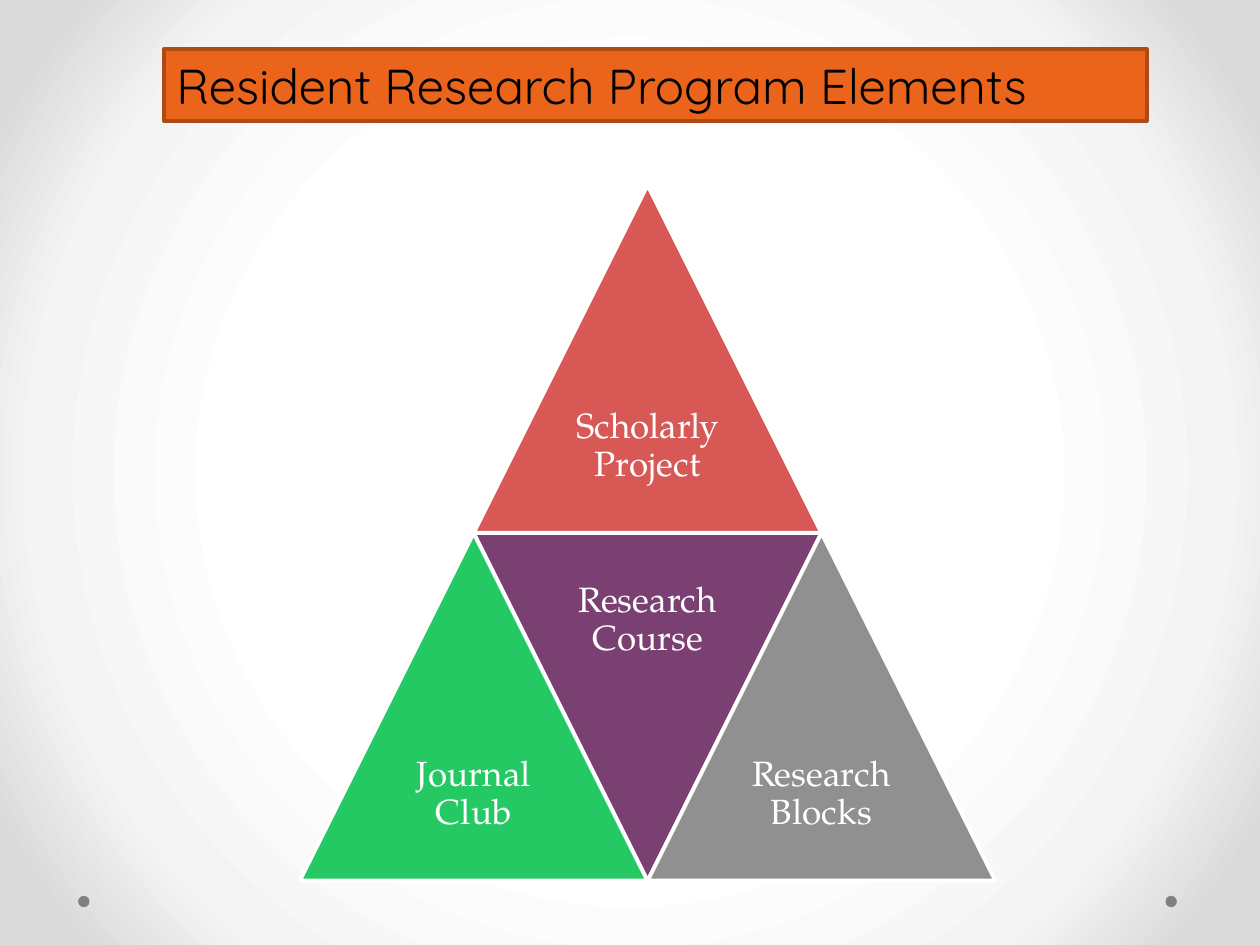
from dataclasses import dataclass

from pptx import Presentation
from pptx.dml.color import RGBColor
from pptx.enum.shapes import MSO_SHAPE as Preset
from pptx.enum.text import MSO_ANCHOR as Anchor, MSO_AUTO_SIZE as AutoSize, PP_ALIGN as Align
from pptx.oxml import parse_xml
from pptx.oxml.ns import nsdecls
from pptx.util import Inches, Pt


@dataclass(frozen=True)
class Theme:
    title_font: str = "Quicksand"
    label_font: str = "TeX Gyre Pagella"
    title_size: int = 28
    label_size: int = 20
    outline: float = 2.25
    title_text: str = "000000"
    title_fill: str = "EB641B"
    title_line: str = "AE4A14"
    white: str = "FFFFFF"
    dot: str = "808080"
    red: str = "D75855"
    green: str = "25C963"
    purple: str = "7B4072"
    grey: str = "909090"
    backdrop: tuple = ((50, "FFFFFF"), (76, "F4F4F4"), (92, "DADADA"))


theme = Theme()


def paint(shape, fill, line=None):
    shape.shadow.inherit = False
    shape.fill.solid()
    shape.fill.fore_color.rgb = RGBColor.from_string(fill)
    if line:
        shape.line.color.rgb = RGBColor.from_string(line)
        shape.line.width = Pt(theme.outline)
    else:
        shape.line.fill.background()


def add_span(para, text, font, size, color):
    span = para.add_run()
    span.text = text
    span.font.name = font
    span.font.size = Pt(size)
    span.font.color.rgb = RGBColor.from_string(color)


deck = Presentation()
deck.slide_width, deck.slide_height = Inches(10), Inches(7.5)
page = deck.slides.add_slide(deck.slide_layouts[5])

# Radial background
stops = "".join(
    f'<a:gs pos="{share * 1000}"><a:srgbClr val="{color}"/></a:gs>'
    for share, color in theme.backdrop
)
page.element.cSld.insert(0, parse_xml(
    f'<p:bg {nsdecls("p", "a")}><p:bgPr><a:gradFill rotWithShape="1">'
    f'<a:gsLst>{stops}</a:gsLst><a:path path="circle">'
    '<a:fillToRect l="50000" t="50000" r="50000" b="50000"/></a:path>'
    '</a:gradFill><a:effectLst/></p:bgPr></p:bg>'
))

# Corner dots
for left in (9.25, 0.62):
    dot = page.shapes.add_shape(
        Preset.OVAL, Inches(left), Inches(7.11), Inches(0.09), Inches(0.09))
    paint(dot, theme.dot)

# Title bar
title = page.shapes.title
title.left, title.top = Inches(1.3), Inches(0.39)
title.width, title.height = Inches(7.8), Inches(0.57)
title.fill.solid()
title.fill.fore_color.rgb = RGBColor.from_string(theme.title_fill)
title.line.color.rgb = RGBColor.from_string(theme.title_line)
title.line.width = Pt(theme.outline)
title.text_frame.auto_size = AutoSize.NONE
title.text_frame.vertical_anchor = Anchor.TOP
para = title.text_frame.paragraphs[0]
para.alignment = Align.LEFT
add_span(para, "Resident Research Program Elements",
         theme.title_font, theme.title_size, theme.title_text)

# Pyramid: each triangle spans two columns and two rows of the grid
cell = Inches(1.38)
pyramid_left, pyramid_top = Inches(2.38), Inches(1.47)
elements = (
    ("Scholarly Project", 1, 0, theme.red, False),
    ("Journal Club", 0, 2, theme.green, False),
    ("Research Course", 1, 2, theme.purple, True),
    ("Research Blocks", 2, 2, theme.grey, False),
)
for name, column, row, color, inverted in elements:
    left = pyramid_left + column * cell
    top = pyramid_top + row * cell
    triangle = page.shapes.add_shape(
        Preset.ISOSCELES_TRIANGLE, left, top, 2 * cell, 2 * cell)
    paint(triangle, color, theme.white)
    triangle.rotation = 180 if inverted else 0

    # The label sits in the wide half of its triangle
    label_top = top if inverted else top + cell
    box = page.shapes.add_textbox(left + cell // 2, label_top, cell, cell)
    frame = box.text_frame
    frame.word_wrap = True
    frame.vertical_anchor = Anchor.MIDDLE
    frame.margin_left = frame.margin_right = Inches(0.08)
    frame.margin_top = frame.margin_bottom = Inches(0.08)
    para = frame.paragraphs[0]
    para.alignment = Align.CENTER
    para.line_spacing = 0.9
    para.space_after = Pt(0.35 * theme.label_size)
    add_span(para, name, theme.label_font, theme.label_size, theme.white)

deck.save("out.pptx")
